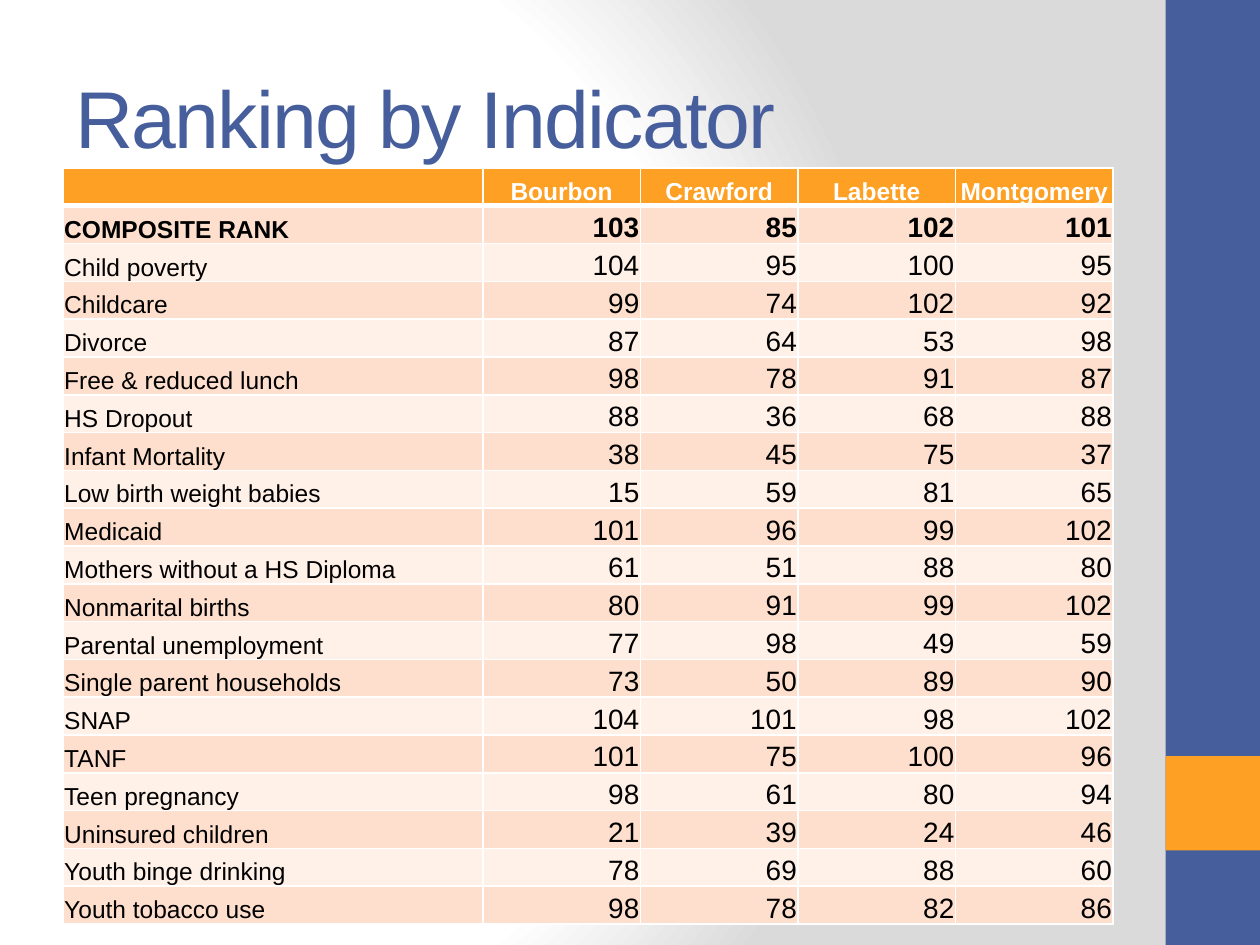
"""Build the county ranking slide: title, side band and indicator table."""
from lxml.etree import SubElement
from pptx import Presentation
from pptx.dml.color import RGBColor
from pptx.enum.shapes import MSO_SHAPE
from pptx.enum.text import MSO_ANCHOR, PP_ALIGN
from pptx.oxml import parse_xml
from pptx.oxml.ns import nsdecls, qn
from pptx.util import Inches, Pt

COLORS = {
    "blue": "465E9C",
    "orange": "FDA023",
    "dark_row": "FEDFCD",
    "light_row": "FFF0E8",
    "white": "FFFFFF",
    "gray": "DADADA",
    "black": "000000",
}
UNIT = Inches(1) / 12
COLUMN_UNITS = [40, 15, 15, 15, 15]
ROW_UNITS = 3.6
TABLE_LEFT, TABLE_TOP = 6, 16
HEADER = ["", "Bourbon", "Crawford", "Labette", "Montgomery"]
RANKINGS = [
    ["COMPOSITE RANK", 103, 85, 102, 101],
    ["Child poverty", 104, 95, 100, 95],
    ["Childcare", 99, 74, 102, 92],
    ["Divorce", 87, 64, 53, 98],
    ["Free & reduced lunch", 98, 78, 91, 87],
    ["HS Dropout", 88, 36, 68, 88],
    ["Infant Mortality", 38, 45, 75, 37],
    ["Low birth weight babies", 15, 59, 81, 65],
    ["Medicaid", 101, 96, 99, 102],
    ["Mothers without a HS Diploma", 61, 51, 88, 80],
    ["Nonmarital births", 80, 91, 99, 102],
    ["Parental unemployment", 77, 98, 49, 59],
    ["Single parent households", 73, 50, 89, 90],
    ["SNAP", 104, 101, 98, 102],
    ["TANF", 101, 75, 100, 96],
    ["Teen pregnancy", 98, 61, 80, 94],
    ["Uninsured children", 21, 39, 24, 46],
    ["Youth binge drinking", 78, 69, 88, 60],
    ["Youth tobacco use", 98, 78, 82, 86],
]


def write_text(frame, text, *, size, color, bold=False, align=PP_ALIGN.LEFT, spacing=0):
    paragraph = frame.paragraphs[0]
    paragraph.alignment = align
    paragraph.font.size = Pt(size)
    if text:
        run = paragraph.add_run()
        run.text = text
        run.font.name = "Arial"
        run.font.size = Pt(size)
        run.font.bold = bold
        run.font.color.rgb = RGBColor.from_string(COLORS[color])
        if spacing:
            run.font._element.set("spc", str(spacing * 100))


def draw_borders(cell, widths):
    properties = cell._tc.get_or_add_tcPr()
    for position, (side, width) in enumerate(widths.items()):
        line = SubElement(properties, qn(f"a:ln{side}"), w=str(Pt(width)))
        fill = SubElement(line, qn("a:solidFill"))
        SubElement(fill, qn("a:srgbClr"), val=COLORS["white"])
        properties.insert(position, line)


presentation = Presentation()
presentation.slide_width = Inches(10)
presentation.slide_height = Inches(7.5)
slide = presentation.slides.add_slide(presentation.slide_layouts[6])

stops = "".join(
    f'<a:gs pos="{share * 1000}"><a:srgbClr val="{COLORS[color]}"/></a:gs>'
    for share, color in [(0, "white"), (75, "white"), (100, "gray")]
)
background = parse_xml(
    f'<p:bg {nsdecls("p", "a")}><p:bgPr><a:gradFill rotWithShape="1">'
    f'<a:gsLst>{stops}</a:gsLst><a:path path="circle">'
    '<a:fillToRect l="20000" t="50000" r="100000" b="50000"/></a:path>'
    "</a:gradFill><a:effectLst/></p:bgPr></p:bg>"
)
slide.element.cSld.insert(0, background)

for top, height, color in [(0, 90, "blue"), (72, 9, "orange")]:
    band = slide.shapes.add_shape(
        MSO_SHAPE.RECTANGLE, *(int(n * UNIT) for n in (111, top, 9, height))
    )
    band.shadow.inherit = False
    band.fill.solid()
    band.fill.fore_color.rgb = RGBColor.from_string(COLORS[color])
    band.line.fill.background()

title = slide.shapes.add_textbox(*(int(n * UNIT) for n in (TABLE_LEFT, 3.6, 100, 15)))
title.text_frame.word_wrap = True
title.text_frame.vertical_anchor = MSO_ANCHOR.MIDDLE
write_text(title.text_frame, "Ranking by Indicator", size=46, color="blue", spacing=-1)

rows = [HEADER, *RANKINGS]
table_size = (TABLE_LEFT, TABLE_TOP, sum(COLUMN_UNITS), ROW_UNITS * len(rows))
table = slide.shapes.add_table(
    len(rows), len(HEADER), *(int(n * UNIT) for n in table_size)
).table
for column, units in zip(table.columns, COLUMN_UNITS):
    column.width = int(units * UNIT)

for row_index, values in enumerate(rows):
    table.rows[row_index].height = int(ROW_UNITS * UNIT)
    is_header = row_index == 0
    row_fill = "orange" if is_header else ("light_row", "dark_row")[row_index % 2]
    for column_index, value in enumerate(values):
        is_label = column_index == 0
        cell = table.cell(row_index, column_index)
        cell.margin_left = cell.margin_right = cell.margin_top = Inches(0.01)
        cell.margin_bottom = 0
        cell.vertical_anchor = MSO_ANCHOR.BOTTOM
        cell.fill.solid()
        cell.fill.fore_color.rgb = RGBColor.from_string(COLORS[row_fill])
        top_width = 3 if row_index == 1 else 1
        draw_borders(cell, {"L": 1, "R": 1, "T": top_width, "B": 3 if is_header else 1})
        number_align = PP_ALIGN.CENTER if is_header else PP_ALIGN.RIGHT
        write_text(
            cell.text_frame,
            str(value),
            size=14 if is_header or is_label else 16,
            color="white" if is_header else "black",
            bold=row_index < 2,
            align=PP_ALIGN.LEFT if is_label else number_align,
        )

presentation.save("out.pptx")
